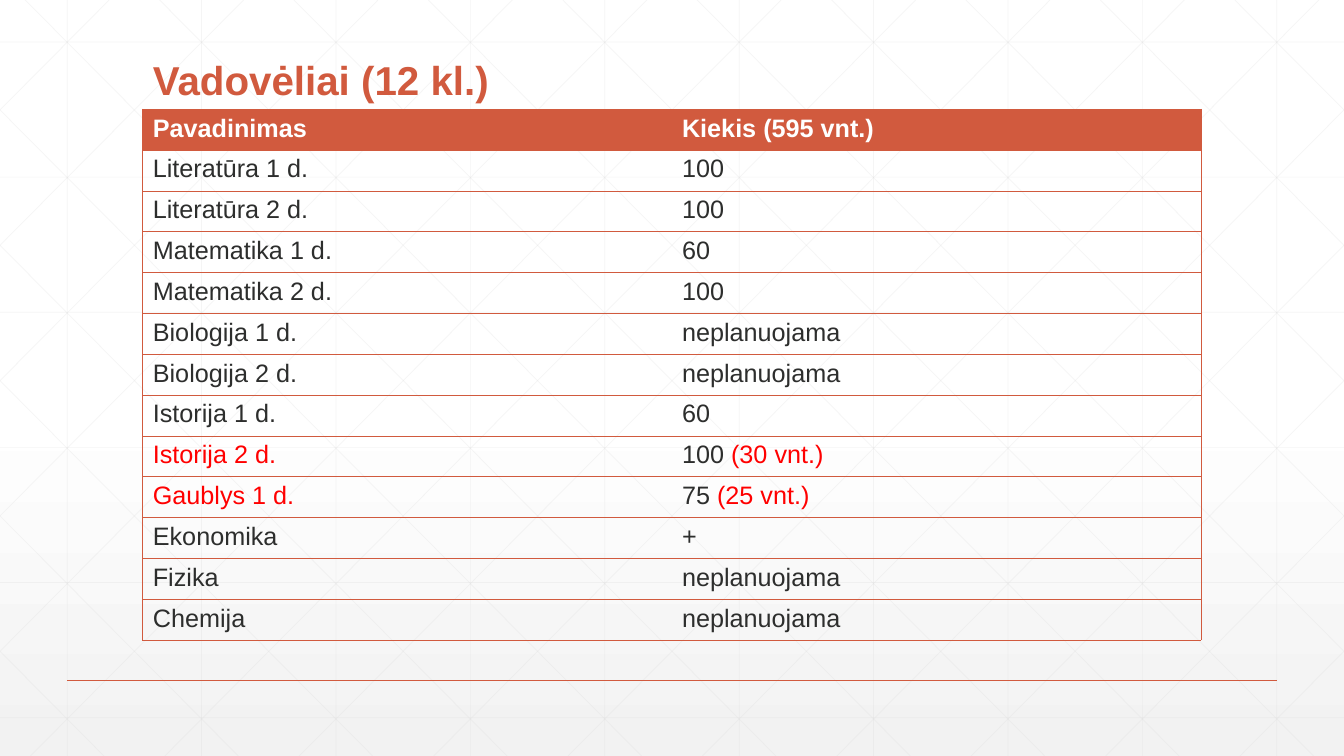
from lxml.etree import SubElement
from pptx import Presentation
from pptx.dml.color import RGBColor
from pptx.enum.shapes import MSO_CONNECTOR
from pptx.enum.text import MSO_ANCHOR, MSO_AUTO_SIZE, PP_ALIGN
from pptx.oxml.ns import qn
from pptx.util import Pt

PX = 9525
WIDTH, HEIGHT = 1280, 720
GRID_STEP = 128
ROW_STEP = 128.7
DIAGONAL_RUN = 715
FONT = "Arial"
COLORS = {
    "accent": "D15A3E",
    "text": "2D2E2D",
    "alert": "FF0000",
    "white": "FFFFFF",
    "shade": "F2F2F2",
    "grid": "D9D9D9",
}
# Each cell is a list of (text, colour) spans.
HEADER = ["Pavadinimas", "Kiekis (595 vnt.)"]
BOOKS = [
    ("Literatūra 1 d.", "100"),
    ("Literatūra 2 d.", "100"),
    ("Matematika 1 d.", "60"),
    ("Matematika 2 d.", "100"),
    ("Biologija 1 d.", "neplanuojama"),
    ("Biologija 2 d.", "neplanuojama"),
    ("Istorija 1 d.", "60"),
    ("Istorija 2 d.", "100 ", "(30 vnt.)"),
    ("Gaublys 1 d.", "75 ", "(25 vnt.)"),
    ("Ekonomika", "+"),
    ("Fizika", "neplanuojama"),
    ("Chemija", "neplanuojama"),
]


def px(value):
    return round(value * PX)


def rgb(name):
    return RGBColor.from_string(COLORS[name])


def set_background(page):
    fill = page.background.fill
    fill.gradient()
    fill.gradient_angle = 270
    for stop, position, color in zip(fill.gradient_stops, (0.53, 1), ("white", "shade")):
        stop.position = position
        stop.color.rgb = rgb(color)


def add_line(shapes, start, end, color, weight, opacity=100):
    line = shapes.add_connector(MSO_CONNECTOR.STRAIGHT, *map(px, start + end))
    line.line.color.rgb = rgb(color)
    line.line.width = Pt(weight)
    SubElement(line.element.spPr, qn("a:effectLst"))
    if opacity < 100:
        tone = line.element.spPr.find(".//" + qn("a:srgbClr"))
        SubElement(tone, qn("a:alpha"), val=str(opacity * 1000))


def grid_lines():
    """Yield the end points of the upright, level and slanted grid lines."""
    for column in range(10):
        x = 64 + GRID_STEP * column
        yield (x, 0), (x, HEIGHT)
    for row in range(6):
        y = 40 + ROW_STEP * row
        yield (0, y), (WIDTH, y)
    slope = HEIGHT / DIAGONAL_RUN
    for step in range(-5, 10):
        origin = 24 + GRID_STEP * step
        left, right = max(origin, 0), min(origin + DIAGONAL_RUN, WIDTH)
        top, bottom = (left - origin) * slope, (right - origin) * slope
        yield (left, top), (right, bottom)
        yield (WIDTH - left, top), (WIDTH - right, bottom)


def add_grid(page):
    group = page.shapes.add_group_shape()
    for start, end in grid_lines():
        add_line(group.shapes, start, end, "grid", 0.5, 25)


def set_title(page, text):
    title = page.shapes.title
    title.left, title.top, title.width, title.height = map(px, (136, 53, 1008, 51))
    frame = title.text_frame
    frame.text = text
    frame.word_wrap = True
    frame.auto_size = MSO_AUTO_SIZE.NONE
    frame.vertical_anchor = MSO_ANCHOR.BOTTOM
    para = frame.paragraphs[0]
    para.alignment = PP_ALIGN.LEFT
    para.line_spacing = 0.9
    para.font.name = FONT
    para.font.size = Pt(28.8)
    para.font.bold = True
    para.font.color.rgb = rgb("accent")
    # Bring the title in front of the grid.
    title.element.getparent().append(title.element)


def set_borders(cell, sides):
    properties = cell._tc.get_or_add_tcPr()
    for side in "LRTB":
        border = SubElement(properties, qn(f"a:ln{side}"), w=str(Pt(0.5)))
        if side in sides:
            fill = SubElement(border, qn("a:solidFill"))
            SubElement(fill, qn("a:srgbClr"), val=COLORS["accent"])
        else:
            SubElement(border, qn("a:noFill"))


def write_cell(cell, spans, bold=False):
    para = cell.text_frame.paragraphs[0]
    para.font.name = FONT
    para.font.size = Pt(18)
    para.font.bold = bold
    for text, color in spans:
        span = para.add_run()
        span.text = text
        span.font.color.rgb = rgb(color)


def add_book_table(page):
    table = page.shapes.add_table(
        len(BOOKS) + 1, 2, *map(px, (136, 104, 1008, 39 * (len(BOOKS) + 1)))
    ).table
    table.horz_banding = False
    for row in table.rows:
        row.height = px(38.9)
    for index, row in enumerate(table.rows):
        for cell, side in zip(row.cells, "LR"):
            set_borders(cell, side + "TB")
            if index == 0:
                cell.fill.solid()
                cell.fill.fore_color.rgb = rgb("accent")
            else:
                cell.fill.background()
    for column, heading in enumerate(HEADER):
        write_cell(table.cell(0, column), [(heading, "white")], bold=True)
    for index, (name, amount, *missing) in enumerate(BOOKS, start=1):
        write_cell(table.cell(index, 0), [(name, "alert" if missing else "text")])
        spans = [(amount, "text")] + [(note, "alert") for note in missing]
        write_cell(table.cell(index, 1), spans)


def main():
    deck = Presentation()
    deck.slide_width, deck.slide_height = px(WIDTH), px(HEIGHT)
    page = deck.slides.add_slide(deck.slide_layouts[5])
    set_background(page)
    add_grid(page)
    add_line(page.shapes, (64, 648), (1216, 648), "accent", 1)
    set_title(page, "Vadovėliai (12 kl.)")
    add_book_table(page)
    deck.save("out.pptx")


if __name__ == "__main__":
    main()
